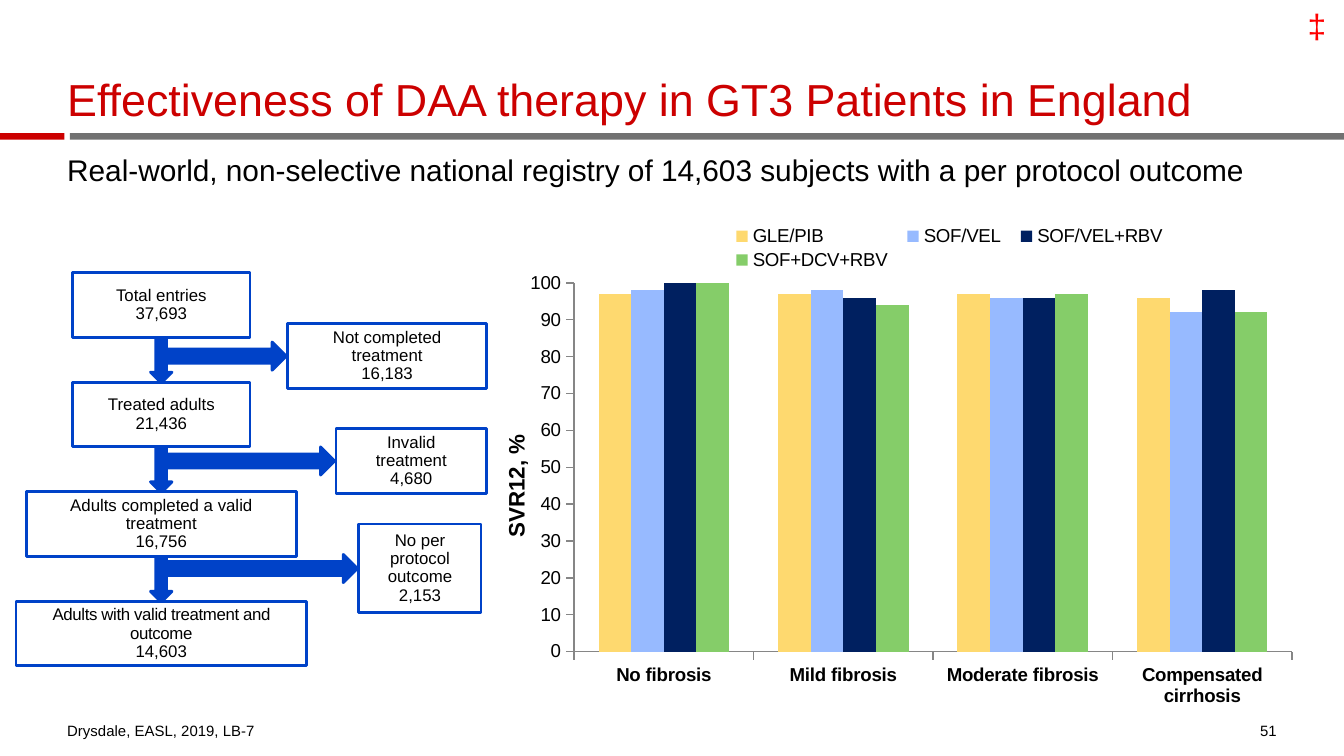
from dataclasses import dataclass

from lxml.etree import SubElement
from pptx import Presentation
from pptx.chart.data import CategoryChartData
from pptx.dml.color import RGBColor
from pptx.enum.chart import XL_CHART_TYPE, XL_LEGEND_POSITION, XL_TICK_MARK
from pptx.enum.shapes import MSO_SHAPE
from pptx.enum.text import MSO_ANCHOR, PP_ALIGN
from pptx.oxml.ns import qn
from pptx.util import Inches, Pt


@dataclass(frozen=True)
class Theme:
    font: str = "Arial"
    red: str = "CC0000"
    mark_red: str = "FF0000"
    grey: str = "717171"
    blue: str = "0042C8"
    black: str = "000000"
    white: str = "FFFFFF"
    axis: str = "868686"
    series: tuple = ("FED96F", "97BAFF", "002060", "85CD69")
    title_size: int = 24
    mark_size: int = 18
    subtitle_size: int = 16
    axis_title_size: int = 12
    chart_size: int = 10
    box_size: int = 9
    footer_size: int = 8


COLUMNS, ROWS = 100, 56.25
CELL = 0.1  # inches per grid column and row


def grid(cells):
    return Inches(cells * CELL)


def rgb(value):
    return RGBColor.from_string(value)


def set_layout(element, x, y, width, height, inner=False):
    """Give a chart part a fixed place, in shares of the chart."""
    for old in element.findall(qn("c:layout")):
        element.remove(old)
    layout = SubElement(element, qn("c:layout"))
    # The layout follows the legend position, and comes first in the plot area.
    position = element.find(qn("c:legendPos"))
    if position is None:
        element.insert(0, layout)
    else:
        position.addnext(layout)
    manual = SubElement(layout, qn("c:manualLayout"))
    settings = [("layoutTarget", "inner")] if inner else []
    settings += [("xMode", "edge"), ("yMode", "edge"),
                 ("x", x), ("y", y), ("w", width), ("h", height)]
    for name, value in settings:
        SubElement(manual, qn(f"c:{name}")).set("val", str(value))


class SlideBuilder:
    """Draws elements on one slide; places are in grid columns and rows."""

    def __init__(self, slide, theme):
        self.slide = slide
        self.theme = theme

    def fill_text(self, shape, text, size, color=None, bold=False, align=PP_ALIGN.LEFT,
                  anchor=MSO_ANCHOR.TOP, inset=(0, 0), line_spacing=0.9, wrap=True,
                  tracking=0):
        frame = shape.text_frame
        frame.text = text
        frame.word_wrap = wrap
        frame.vertical_anchor = anchor
        frame.margin_left = frame.margin_right = grid(inset[0])
        frame.margin_top = frame.margin_bottom = grid(inset[1])
        for paragraph in frame.paragraphs:
            paragraph.alignment = align
            paragraph.line_spacing = line_spacing
            paragraph.space_before = Pt(0)
            for run in paragraph.runs:
                run.font.name = self.theme.font
                run.font.size = Pt(size)
                run.font.bold = bold
                run.font.color.rgb = rgb(color or self.theme.black)
        if tracking:
            first = frame.paragraphs[0].runs[0]
            first.font._element.set("spc", str(tracking))

    def placeholder(self, index, place, text, size, **style):
        shape = self.slide.placeholders[index]
        shape.left, shape.top, shape.width, shape.height = map(grid, place)
        self.fill_text(shape, text, size, **style)
        for paragraph in shape.text_frame.paragraphs:
            properties = paragraph._p.get_or_add_pPr()
            properties.set("marL", "0")
            properties.set("indent", "0")
            SubElement(properties, qn("a:buNone"))

    def label(self, place, text, size, rotation=0, **style):
        shape = self.slide.shapes.add_textbox(*map(grid, place))
        shape.rotation = rotation
        self.fill_text(shape, text, size, **style)

    def block(self, kind, place, fill, line=None):
        shape = self.slide.shapes.add_shape(kind, *map(grid, place))
        shape.shadow.inherit = False
        shape.fill.solid()
        shape.fill.fore_color.rgb = rgb(fill)
        if line:
            shape.line.color.rgb = rgb(line)
            shape.line.width = Pt(1.5)
        else:
            shape.line.fill.background()
        return shape

    def flow_box(self, place, text, inset=(1, 0.5), tracking=0):
        shape = self.block(MSO_SHAPE.RECTANGLE, place, self.theme.white, self.theme.blue)
        self.fill_text(shape, text, self.theme.box_size, align=PP_ALIGN.CENTER,
                       anchor=MSO_ANCHOR.MIDDLE, inset=inset, tracking=tracking)

    def flow_arrow(self, kind, place):
        self.block(kind, place, self.theme.blue, self.theme.blue)

    def column_chart(self, place, categories, series):
        data = CategoryChartData()
        data.categories = categories
        for name, values in series:
            data.add_series(name, values)
        chart = self.slide.shapes.add_chart(
            XL_CHART_TYPE.COLUMN_CLUSTERED, *map(grid, place), data).chart
        chart.has_title = False
        chart.font.name = self.theme.font
        chart.font.size = Pt(self.theme.chart_size)
        chart.font.color.rgb = rgb(self.theme.black)

        plot = chart.plots[0]
        plot.gap_width = 150
        plot.overlap = 0
        plot.vary_by_categories = False
        for column, color in zip(plot.series, self.theme.series):
            column.format.fill.solid()
            column.format.fill.fore_color.rgb = rgb(color)

        for axis in (chart.category_axis, chart.value_axis):
            axis.has_major_gridlines = False
            axis.major_tick_mark = XL_TICK_MARK.OUTSIDE
            axis.minor_tick_mark = XL_TICK_MARK.NONE
            axis.format.line.color.rgb = rgb(self.theme.axis)
        chart.category_axis.tick_labels.font.bold = True
        value_axis = chart.value_axis
        value_axis.minimum_scale, value_axis.maximum_scale = 0, 100
        value_axis.major_unit = 10

        chart.has_legend = True
        chart.legend.position = XL_LEGEND_POSITION.RIGHT
        chart.legend.include_in_layout = False
        set_layout(chart.legend._element, 0.26, 0.03, 0.55, 0.1)
        plot_area = chart._chartSpace.chart.plotArea
        set_layout(plot_area, 0.08, 0.15, 0.87, 0.74, inner=True)


def draw_flow(builder):
    center, height, first_top, step = 12, 4.8, 20.3, 8.15
    tight = (0.5, 0.2)
    exits = [
        ((21.4, 24.1, 14.8, height), "Not completed treatment\n16,183", (1, 0.5)),
        ((25, 31.9, 11.2, height), "Invalid treatment\n4,680", (1, 0.5)),
        ((26.7, 39, 9.1, 6.6), "No per protocol\noutcome\n2,153", (0.5, 0.5)),
    ]
    stages = [
        (13.2, "Total entries\n37,693", (1, 0.5), 0),
        (13.2, "Treated adults\n21,436", (1, 0.5), 0),
        (20.1, "Adults completed a valid treatment\n16,756", tight, 0),
        (21.6, "Adults with valid treatment and outcome\n14,603", tight, -20),
    ]
    for index, (place, text, inset) in enumerate(exits):
        left, top, _, exit_height = place
        builder.flow_box(place, text, inset)
        builder.flow_arrow(MSO_SHAPE.DOWN_ARROW,
                           (center - 0.8, first_top + index * step + height, 1.6, 3.4))
        builder.flow_arrow(MSO_SHAPE.RIGHT_ARROW,
                           (center, top + exit_height / 2 - 1.05, left - 0.1 - center, 2.1))
    for index, (width, text, inset, tracking) in enumerate(stages):
        place = (center - width / 2, first_top + index * step, width, height)
        builder.flow_box(place, text, inset, tracking)


def main():
    theme = Theme()
    presentation = Presentation()
    presentation.slide_width, presentation.slide_height = grid(COLUMNS), grid(ROWS)
    slide = presentation.slides.add_slide(presentation.slide_layouts[1])
    builder = SlideBuilder(slide, theme)

    builder.block(MSO_SHAPE.RECTANGLE, (5.2, 9.9, COLUMNS - 5.2, 0.5), theme.grey)
    builder.block(MSO_SHAPE.RECTANGLE, (0, 9.9, 4.8, 0.5), theme.red)
    builder.placeholder(0, (5, 4.6, 93.4, 4.8),
                        "Effectiveness of DAA therapy in GT3 Patients in England",
                        theme.title_size, color=theme.red, anchor=MSO_ANCHOR.BOTTOM)
    builder.placeholder(1, (5, 11.6, 92.3, 2.6),
                        "Real-world, non-selective national registry of 14,603 subjects "
                        "with a per protocol outcome", theme.subtitle_size)
    footer = dict(anchor=MSO_ANCHOR.BOTTOM, line_spacing=1)
    builder.label((5, 54.4, 45.9, 0.6), "Drysdale, EASL, 2019, LB-7", theme.footer_size, **footer)
    builder.label((92.3, 53.6, 2.7, 1.4), "51", theme.footer_size, align=PP_ALIGN.RIGHT, **footer)

    draw_flow(builder)
    builder.column_chart(
        (37.8, 15.5, 61.4, 37.1),
        ["No fibrosis", "Mild fibrosis", "Moderate fibrosis", "Compensated cirrhosis"],
        [("GLE/PIB", (97, 97, 97, 96)), ("SOF/VEL", (98, 98, 96, 92)),
         ("SOF/VEL+RBV", (100, 96, 96, 98)), ("SOF+DCV+RBV", (100, 94, 97, 92))])
    builder.label((96.6, 0, 2.9, 3.8), "‡", theme.mark_size, color=theme.mark_red,
                  inset=(0.7, 0.4), line_spacing=1, wrap=False)
    builder.label((31.8, 32.4, 13.4, 1.8), "SVR12, %", theme.axis_title_size,
                  rotation=270, bold=True)
    presentation.save("out.pptx")


if __name__ == "__main__":
    main()
